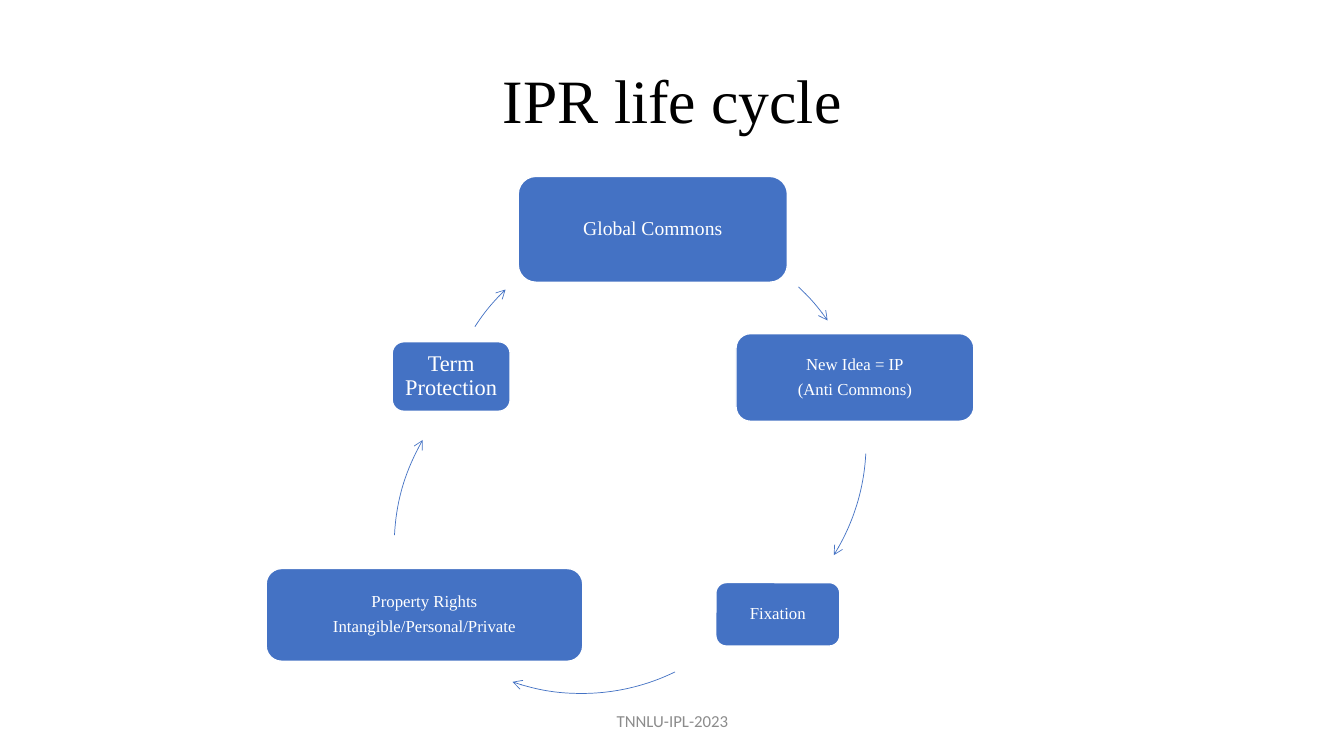
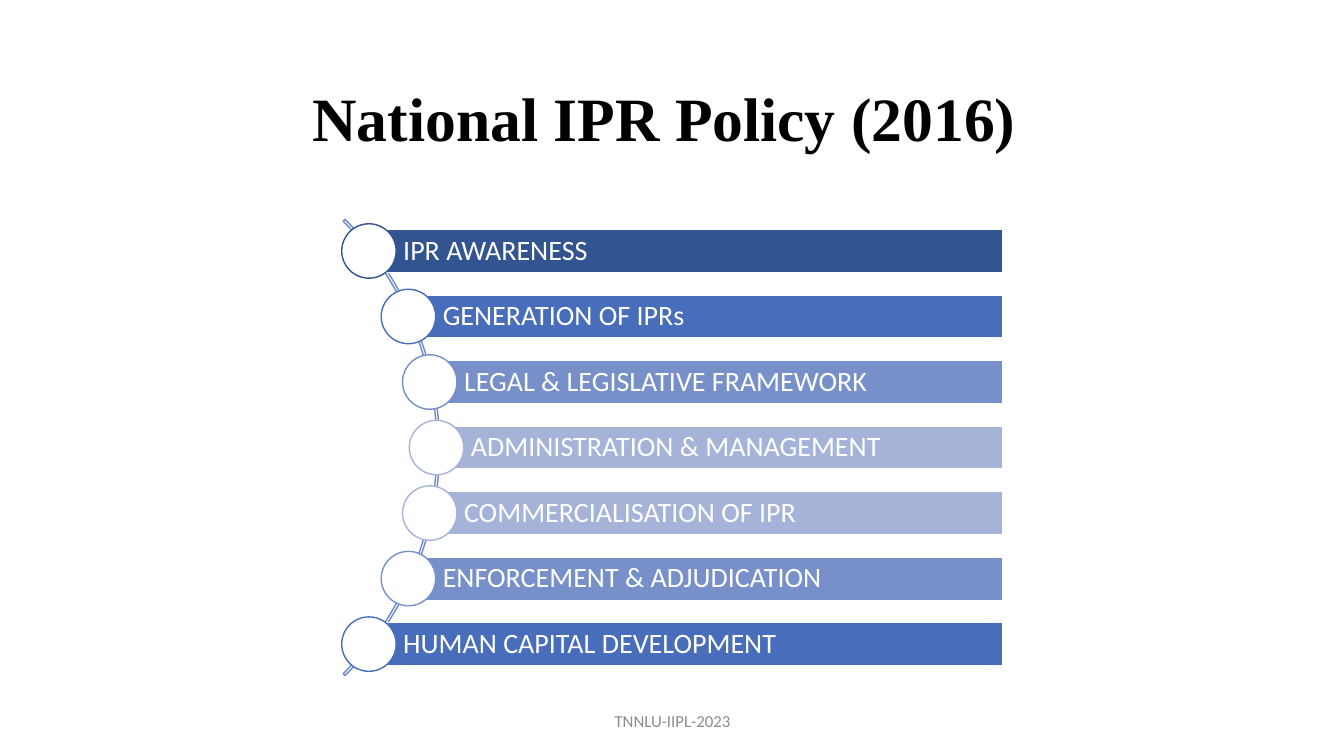
import math

import pptx
import pptx.dml.color
import pptx.enum.shapes
import pptx.enum.text
import pptx.oxml
import pptx.oxml.ns
import pptx.util

# Shared look: 100 px to the inch
PX = 9144
HUES = {
    "black": "000000", "white": "FFFFFF", "grey": "8C8C8C",
    "blue": "4472C4", "arc": "6D89CB",
    "deep": "325491", "mid": "476DBB", "soft": "7790C9", "pale": "A6B3D9",
}
SERIF, SANS = "Times New Roman", "Calibri"
FOOT = (442, 695, 450, 40)
KIND = pptx.enum.shapes.MSO_SHAPE
ALIGN = pptx.enum.text.PP_ALIGN

# Life cycle: box, font size, inset, lines
STAGES = [
    ((514, 175, 267, 105), 14, 6, ["Global Commons"]),
    ((730, 331, 236, 87), 12, 5, ["New Idea = IP", "(Anti Commons)"]),
    ((710, 578, 123, 63), 12, 5, ["Fixation"]),
    ((264, 564, 314, 92), 12, 5,
     ["Property Rights", "Intangible/Personal/Private"]),
    ((389, 339, 117, 69), 16, 7, ["Term Protection"]),
]
# Arrows run clockwise on circles: left, top, start and end in degrees
RING = 422
TURNS = [
    (437, 228, 313, 325),
    (437, 228, 3, 32),
    (366, 266, 64, 109),
    (391, 331, 183, 210),
    (437, 228, 213, 226),
]

# Policy aims, from top to bottom
AIMS = [
    ("IPR AWARENESS", "deep"),
    ("GENERATION OF IPRs", "mid"),
    ("LEGAL & LEGISLATIVE FRAMEWORK", "soft"),
    ("ADMINISTRATION & MANAGEMENT", "pale"),
    ("COMMERCIALISATION OF IPR", "pale"),
    ("ENFORCEMENT & ADJUDICATION", "soft"),
    ("HUMAN CAPITAL DEVELOPMENT", "mid"),
]
HUB_X, HUB_Y, REACH, ARC_R = 116, 444, 317, 320
STEP, BAR_H, DOT, RIGHT = 65, 43, 54, 995


def emu(vals):
    return [pptx.util.Emu(round(v * PX)) for v in vals]


def rgb(hue):
    return pptx.dml.color.RGBColor.from_string(HUES[hue])


def write(shape, lines, size, font, hue, bold=False, align=ALIGN.CENTER,
          inset=None, lead=0.9, after=0):
    frame = shape.text_frame
    frame.word_wrap = True
    frame.vertical_anchor = pptx.enum.text.MSO_ANCHOR.MIDDLE
    if inset:
        (frame.margin_left, frame.margin_top,
         frame.margin_right, frame.margin_bottom) = emu(inset)
    for i, line in enumerate(lines):
        para = frame.add_paragraph() if i else frame.paragraphs[0]
        para.alignment = align
        para.line_spacing = lead
        para.space_after = pptx.util.Pt(after)
        run = para.add_run()
        run.text = line
        run.font.size = pptx.util.Pt(size)
        run.font.name = font
        run.font.bold = bold
        run.font.color.rgb = rgb(hue)


def draw(slide, kind, box, fill, line, width=1):
    shape = slide.shapes.add_shape(kind, *emu(box))
    shape.shadow.inherit = False
    if fill:
        shape.fill.solid()
        shape.fill.fore_color.rgb = rgb(fill)
    else:
        shape.fill.background()
    shape.line.color.rgb = rgb(line)
    shape.line.width = pptx.util.Pt(width)
    return shape


def start(deck, title, box, foot, bold=False):
    """Add a slide with its title and footer."""
    slide = deck.slides.add_slide(deck.slide_layouts[6])
    head = slide.shapes.add_textbox(*emu(box))
    write(head, [title], 44, SERIF, "black", bold)
    base = slide.shapes.add_textbox(*emu(FOOT))
    write(base, [foot], 12, SANS, "grey", lead=1)
    return slide


def cycle(deck):
    slide = start(deck, "IPR life cycle", (92, 30, 1150, 145),
                  "TNNLU-IPL-2023")
    for box, size, pad, lines in STAGES:
        shape = draw(slide, KIND.ROUNDED_RECTANGLE, box, "blue", "white")
        write(shape, lines, size, SERIF, "white", inset=[pad] * 4,
              after=round(size * 0.4))
    # Curved arrows between the stages
    for left, top, *ends in TURNS:
        arc = draw(slide, KIND.ARC, (left, top, RING, RING), None, "blue", 0.5)
        for i, deg in enumerate(ends):
            arc.adjustments[i] = deg * 0.6
        tip = pptx.oxml.parse_xml(
            '<a:tailEnd %s type="arrow"/>' % pptx.oxml.ns.nsdecls("a"))
        arc.line._get_or_add_ln().append(tip)


def policy(deck):
    slide = start(deck, "National IPR Policy (2016)", (188, 48, 942, 145),
                  "TNNLU-IIPL-2023", True)
    # Arc behind the dots
    box = (HUB_X - ARC_R, HUB_Y - ARC_R, 2 * ARC_R, 2 * ARC_R)
    arc = draw(slide, KIND.BLOCK_ARC, box, None, "arc")
    for i, val in enumerate((189, 27, 0.004)):
        arc.adjustments[i] = val
    # Each bar starts at the centre of a dot on the arc
    for i, (text, hue) in enumerate(AIMS):
        rise = (i - len(AIMS) // 2) * STEP
        x, y = HUB_X + math.sqrt(REACH ** 2 - rise ** 2), HUB_Y + rise
        bar = draw(slide, KIND.RECTANGLE,
                   (x, y - BAR_H / 2, RIGHT - x, BAR_H), hue, "white")
        write(bar, [text], 20, SANS, "white", align=ALIGN.LEFT,
              inset=(34, 6, 6, 6))
        draw(slide, KIND.OVAL, (x - DOT / 2, y - DOT / 2, DOT, DOT),
             "white", hue)


def main():
    deck = pptx.Presentation()
    deck.slide_width, deck.slide_height = emu((1333, 750))
    cycle(deck)
    policy(deck)
    deck.save("out.pptx")


if __name__ == "__main__":
    main()
